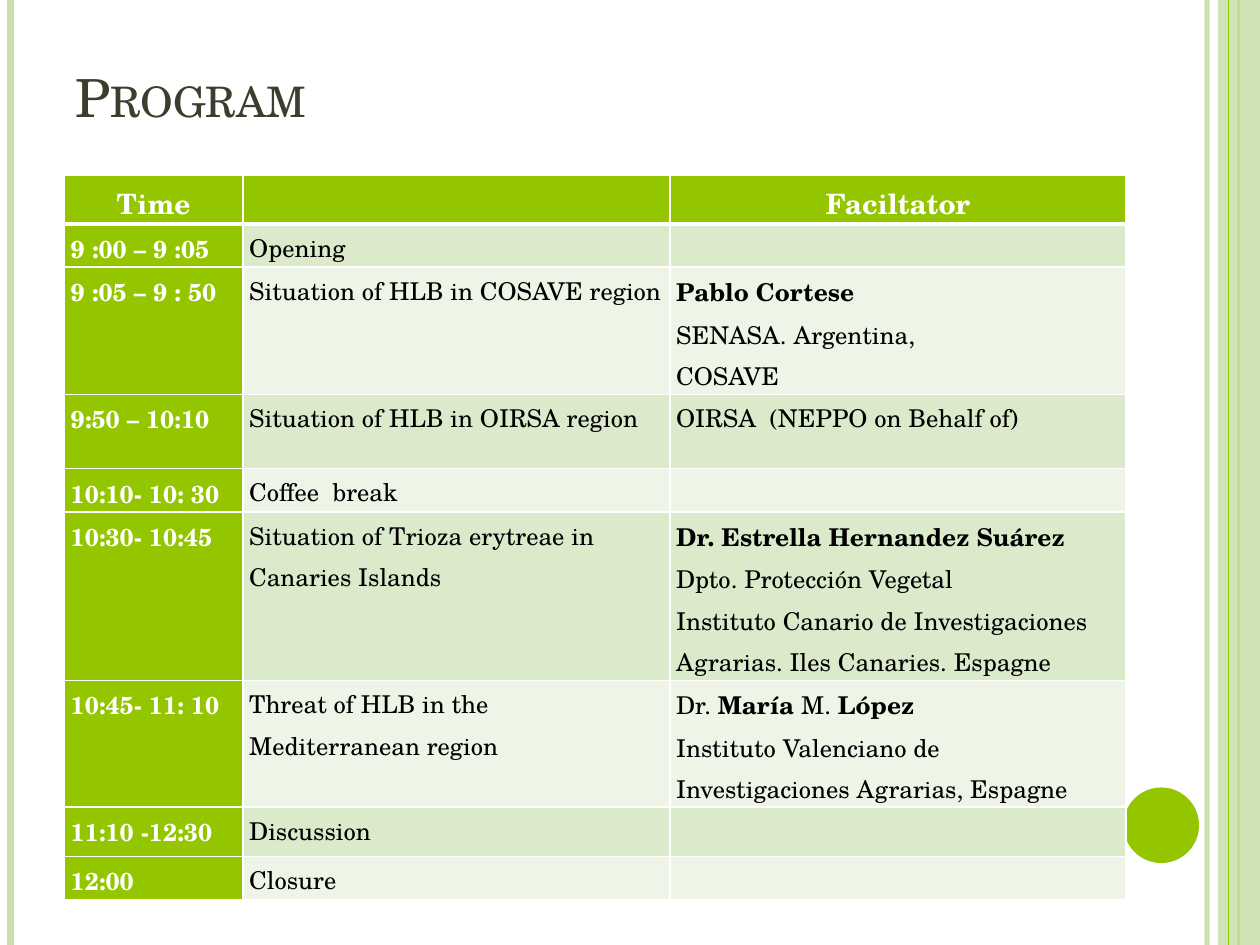
from lxml import etree
from pptx import Presentation
from pptx import util as u
from pptx.dml.color import RGBColor
from pptx.enum import shapes, text
from pptx.oxml import ns

GREEN = RGBColor(0x94, 0xC6, 0x00)
PALE = RGBColor(0xC8, 0xDF, 0xAB)
BAND_DARK = RGBColor(0xDC, 0xEA, 0xCC)
BAND_LIGHT = RGBColor(0xEE, 0xF5, 0xE7)
TITLE = RGBColor(0x3E, 0x3D, 0x2D)
WHITE = RGBColor(0xFF, 0xFF, 0xFF)
BLACK = RGBColor(0, 0, 0)

HEIGHT = 540
COLUMNS = [102, 244, 260.8]
PROGRAM = [
    (27.7, "*Time*", "", "*Faciltator*"),
    (24.6, "*9 :00 – 9 :05*", "Opening", ""),
    (72.8, "*9 :05 – 9 : 50*", "Situation of HLB in COSAVE region",
     "*Pablo Cortese*\nSENASA. Argentina,\nCOSAVE"),
    (42.3, "*9:50 – 10:10*", "Situation of HLB in OIRSA region",
     "OIRSA  (NEPPO on Behalf of)"),
    (24.8, "*10:10- 10: 30*", "Coffee  break", ""),
    (96.3, "*10:30- 10:45*", "Situation of Trioza erytreae in Canaries Islands",
     "*Dr. Estrella Hernandez Suárez*\nDpto. Protección Vegetal\n"
     "Instituto Canario de Investigaciones Agrarias. Iles Canaries. Espagne"),
    (72.3, "*10:45- 11: 10*", "Threat of HLB in the Mediterranean region",
     "Dr. *María* M. *López*\n"
     "Instituto Valenciano de Investigaciones Agrarias, Espagne"),
    (28.3, "*11:10 -12:30*", "Discussion", ""),
    (24.6, "*12:00*", "Closure", ""),
]


class Painter:
    font = "TeX Gyre Schola"

    def __init__(self, page):
        self.page = page

    def add_alpha(self, element, percent):
        for color in element.spPr.iter(ns.qn("a:srgbClr")):
            etree.SubElement(color, ns.qn("a:alpha"), val=str(percent * 1000))

    def stripe(self, x, width, color, opacity=100):
        line = self.page.shapes.add_connector(
            shapes.MSO_CONNECTOR.STRAIGHT, u.Pt(x), 0, u.Pt(x), u.Pt(HEIGHT))
        line.line.color.rgb = color
        line.line.width = u.Pt(width)
        if opacity < 100:
            self.add_alpha(line._element, opacity)
        etree.SubElement(line._element.spPr, ns.qn("a:effectLst"))

    def shape(self, kind, left, top, width, height, color, opacity=100):
        shape = self.page.shapes.add_shape(
            kind, u.Pt(left), u.Pt(top), u.Pt(width), u.Pt(height))
        shape.shadow.inherit = False
        shape.fill.solid()
        shape.fill.fore_color.rgb = color
        shape.line.fill.background()
        if opacity < 100:
            self.add_alpha(shape._element, opacity)

    def style(self, para, size, color):
        para.font.name = self.font
        para.font.size = u.Pt(size)
        para.font.color.rgb = color

    def title(self, words, left, top, width, height):
        box = self.page.shapes.add_textbox(
            u.Pt(left), u.Pt(top), u.Pt(width), u.Pt(height))
        frame = box.text_frame
        frame.word_wrap = True
        frame.vertical_anchor = text.MSO_ANCHOR.BOTTOM
        para = frame.paragraphs[0]
        self.style(para, 30, TITLE)
        span = para.add_run()
        span.text = words
        span.font._element.set("cap", "small")

    def borders(self, cell, top, bottom):
        properties = cell._tc.get_or_add_tcPr()
        widths = {"lnL": 1, "lnR": 1, "lnT": top, "lnB": bottom}
        for index, (side, width) in enumerate(widths.items()):
            line = etree.Element(ns.qn(f"a:{side}"), w=str(u.Pt(width)))
            fill = etree.SubElement(line, ns.qn("a:solidFill"))
            etree.SubElement(fill, ns.qn("a:srgbClr"), val=str(WHITE))
            properties.insert(index, line)

    def cell(self, cell, words, fill, color, size, align):
        cell.fill.solid()
        cell.fill.fore_color.rgb = fill
        cell.margin_left = cell.margin_right = u.Pt(3.6)
        cell.margin_top = cell.margin_bottom = 0
        for index, line in enumerate(words.split("\n")):
            frame = cell.text_frame
            para = frame.add_paragraph() if index else frame.paragraphs[0]
            para.alignment = align
            para.line_spacing = 1.15
            self.style(para, size, color)
            for part, piece in enumerate(line.split("*")):
                if piece:
                    span = para.add_run()
                    span.text = piece
                    span.font.bold = part % 2 == 1

    def table(self, left, top, columns, rows):
        heights = [row[0] for row in rows]
        table = self.page.shapes.add_table(
            len(rows), len(columns), u.Pt(left), u.Pt(top),
            u.Pt(sum(columns)), u.Pt(sum(heights))).table
        for column, width in zip(table.columns, columns):
            column.width = u.Pt(width)
        for r, (height, *words) in enumerate(rows):
            table.rows[r].height = u.Pt(height)
            band = BAND_DARK if r % 2 else BAND_LIGHT
            for c, content in enumerate(words):
                heading = r == 0 or c == 0
                cell = table.cell(r, c)
                self.cell(cell, content,
                          GREEN if heading else band,
                          WHITE if heading else BLACK,
                          14 if r else 16,
                          text.PP_ALIGN.LEFT if r else text.PP_ALIGN.CENTER)
                self.borders(cell, 3 if r == 1 else 1, 1 if r else 3)


def main():
    deck = Presentation()
    deck.slide_width, deck.slide_height = u.Pt(720), u.Pt(HEIGHT)
    painter = Painter(deck.slides.add_slide(deck.slide_layouts[6]))
    painter.stripe(689.8, 3, PALE, 93)
    painter.stripe(6, 4.5, PALE)
    painter.stripe(707.8, 1.5, GREEN)
    painter.shape(shapes.MSO_SHAPE.RECTANGLE, 696, 0, 24, HEIGHT, PALE, 87)
    painter.stripe(702, 0.75, GREEN)
    painter.shape(shapes.MSO_SHAPE.OVAL, 642, 450, 43.2, 43.2, GREEN)
    painter.title("Program", 36, 21.6, 588, 55.4)
    painter.table(36.8, 100.4, COLUMNS, PROGRAM)
    deck.save("out.pptx")


if __name__ == "__main__":
    main()
